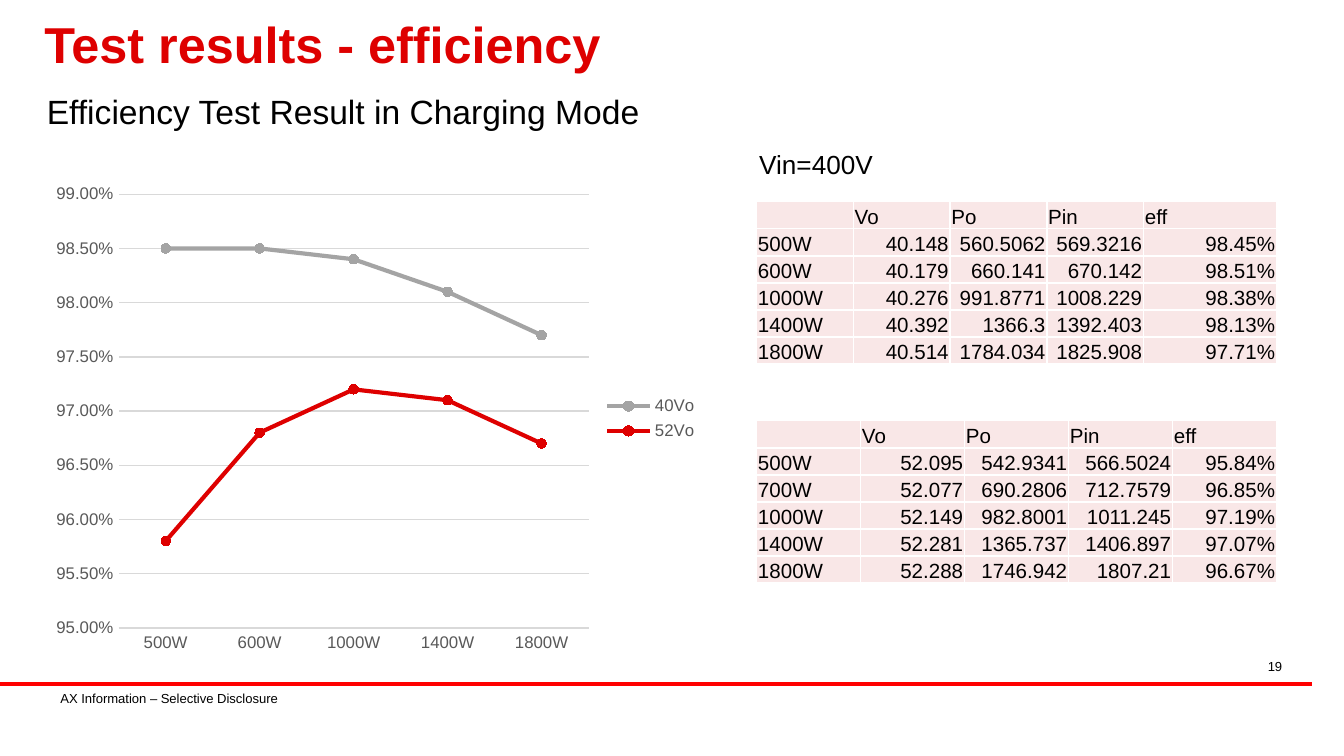
from dataclasses import dataclass

from lxml import etree
from pptx import Presentation
from pptx.chart.data import CategoryChartData
from pptx.dml.color import RGBColor
from pptx.enum.chart import XL_CHART_TYPE, XL_LEGEND_POSITION, XL_MARKER_STYLE, XL_TICK_MARK
from pptx.enum.shapes import MSO_CONNECTOR
from pptx.enum.text import MSO_ANCHOR, PP_ALIGN
from pptx.oxml.ns import qn
from pptx.util import Inches, Pt

LINE_MARKERS = XL_CHART_TYPE.LINE_MARKERS
LEGEND_RIGHT = XL_LEGEND_POSITION.RIGHT
CIRCLE = XL_MARKER_STYLE.CIRCLE
NO_TICK = XL_TICK_MARK.NONE
STRAIGHT = MSO_CONNECTOR.STRAIGHT
TOP, MIDDLE, BOTTOM = MSO_ANCHOR.TOP, MSO_ANCHOR.MIDDLE, MSO_ANCHOR.BOTTOM
LEFT, RIGHT = PP_ALIGN.LEFT, PP_ALIGN.RIGHT

COLUMNS, ROWS = 100, 56.25
CELL = Inches(0.1)


@dataclass(frozen=True)
class Theme:
    font: str = "Arial"
    ink: str = "000000"
    accent: str = "DE0000"
    rule: str = "FF0000"
    neutral: str = "A4A4A4"
    axis: str = "595959"
    grid: str = "D9D9D9"
    cell: str = "F9E7E7"
    border: str = "FFFFFF"
    title: float = 27
    subtitle: float = 18
    label: float = 14
    table: int = 11
    chart: float = 9
    footer: float = 7


def grid(*lengths):
    return [round(length * CELL) for length in lengths]


def rgb(value):
    return RGBColor.from_string(value)


class SlideBuilder:
    def __init__(self, slide, theme):
        self.shapes = slide.shapes
        self.theme = theme

    def style_font(self, font, size, color, bold=False):
        font.name, font.size, font.bold = self.theme.font, Pt(size), bold
        font.color.rgb = rgb(color)

    def style_line(self, line, color, width):
        line.color.rgb, line.width = rgb(color), Pt(width)

    def text(self, content, area, size, color=None, bold=False, align=LEFT,
             anchor=TOP, inset=(0.08, 0.04), spacing=1.0):
        frame = self.shapes.add_textbox(*grid(*area)).text_frame
        frame.word_wrap = True
        frame.vertical_anchor = anchor
        frame.margin_left = frame.margin_right = Inches(inset[0])
        frame.margin_top = frame.margin_bottom = Inches(inset[1])
        frame.text = content
        paragraph = frame.paragraphs[0]
        paragraph.alignment, paragraph.line_spacing = align, spacing
        self.style_font(paragraph.runs[0].font, size, color or self.theme.ink, bold)

    def rule(self, start, end, row):
        rule = self.shapes.add_connector(STRAIGHT, *grid(start, row, end, row))
        self.style_line(rule.line, self.theme.rule, 2.25)
        etree.SubElement(rule.element.spPr, qn("a:effectLst"))

    def line_chart(self, area, categories, series):
        data = CategoryChartData(number_format="0.00%")
        data.categories = categories
        for name, values, _ in series:
            data.add_series(name, values)
        chart = self.shapes.add_chart(LINE_MARKERS, *grid(*area), data).chart
        self.style_font(chart.font, self.theme.chart, self.theme.axis)
        chart.has_title = False
        chart.has_legend = True
        chart.legend.position = LEGEND_RIGHT
        chart.legend.include_in_layout = False
        self.style_font(chart.legend.font, self.theme.chart, self.theme.axis)

        for axis in (chart.category_axis, chart.value_axis):
            axis.major_tick_mark = axis.minor_tick_mark = NO_TICK
            self.style_font(axis.tick_labels.font, self.theme.chart, self.theme.axis)
        self.style_line(chart.category_axis.format.line, self.theme.grid, 0.75)
        scale = chart.value_axis
        scale.minimum_scale, scale.maximum_scale = 0.95, 0.99
        scale.major_unit = (scale.maximum_scale - scale.minimum_scale) / 8
        scale.tick_labels.number_format = "0.00%"
        scale.tick_labels.number_format_is_linked = False
        scale.format.line.fill.background()
        self.style_line(scale.major_gridlines.format.line, self.theme.grid, 0.75)

        plot = chart.plots[0]
        plot.vary_by_categories = False
        for curve, (_, _, color) in zip(plot.series, series):
            curve.smooth = False
            self.style_line(curve.format.line, color, 2.25)
            curve.marker.style, curve.marker.size = CIRCLE, 5
            curve.marker.format.fill.solid()
            curve.marker.format.fill.fore_color.rgb = rgb(color)
            self.style_line(curve.marker.format.line, color, 0.75)

    def border(self, cell):
        properties = cell._tc.get_or_add_tcPr()
        for side in ("lnL", "lnR", "lnT", "lnB"):
            edge = etree.SubElement(properties, qn(f"a:{side}"), w=str(Pt(1)))
            fill = etree.SubElement(edge, qn("a:solidFill"))
            etree.SubElement(fill, qn("a:srgbClr"), val=self.theme.border)

    def table_cell(self, cell, content, align):
        self.border(cell)
        cell.fill.solid()
        cell.fill.fore_color.rgb = rgb(self.theme.cell)
        cell.margin_left = cell.margin_right = cell.margin_top = Inches(0.01)
        cell.margin_bottom = 0
        cell.vertical_anchor = BOTTOM
        cell.text_frame.text = content
        paragraph = cell.text_frame.paragraphs[0]
        paragraph.alignment = align
        for run in paragraph.runs:
            self.style_font(run.font, self.theme.table, self.theme.ink)
        if not content:
            etree.SubElement(paragraph._p, qn("a:endParaRPr"), sz=str(self.theme.table * 100))

    def table(self, area, widths, records):
        table = self.shapes.add_table(len(records), len(widths), *grid(*area)).table
        table.first_row = table.horz_banding = False
        for column, width in zip(table.columns, grid(*widths)):
            column.width = width
        for row_index, record in enumerate(records):
            for column_index, content in enumerate(record):
                align = RIGHT if row_index and column_index else LEFT
                self.table_cell(table.cell(row_index, column_index), content, align)


HEADINGS = ("", "Vo", "Po", "Pin", "eff")
RESULTS_40V = (
    HEADINGS,
    ("500W", "40.148", "560.5062", "569.3216", "98.45%"),
    ("600W", "40.179", "660.141", "670.142", "98.51%"),
    ("1000W", "40.276", "991.8771", "1008.229", "98.38%"),
    ("1400W", "40.392", "1366.3", "1392.403", "98.13%"),
    ("1800W", "40.514", "1784.034", "1825.908", "97.71%"),
)
RESULTS_52V = (
    HEADINGS,
    ("500W", "52.095", "542.9341", "566.5024", "95.84%"),
    ("700W", "52.077", "690.2806", "712.7579", "96.85%"),
    ("1000W", "52.149", "982.8001", "1011.245", "97.19%"),
    ("1400W", "52.281", "1365.737", "1406.897", "97.07%"),
    ("1800W", "52.288", "1746.942", "1807.21", "96.67%"),
)
EFFICIENCY_40V = (0.985, 0.985, 0.984, 0.981, 0.977)
EFFICIENCY_52V = (0.958, 0.968, 0.972, 0.971, 0.967)


def main():
    presentation = Presentation()
    presentation.slide_width, presentation.slide_height = grid(COLUMNS, ROWS)
    theme = Theme()
    page = SlideBuilder(presentation.slides.add_slide(presentation.slide_layouts[6]), theme)

    page.rule(0, 97.6, 50.9)
    page.text("AX Information – Selective Disclosure", (3.7, 50.95, 23.1, 2), theme.footer)
    page.text("19", (72.9, 48.6, 23.3, 1.7), theme.footer, align=RIGHT)
    page.text("Efficiency Test Result in Charging Mode", (2.5, 6.3, 49.2, 4),
              theme.subtitle, inset=(0.1, 0.05))
    page.text("Test results - efficiency", (2.5, 0.2, 92.5, 6.7), theme.title,
              color=theme.accent, bold=True, anchor=MIDDLE, spacing=0.85)
    power_levels = [record[0] for record in RESULTS_40V[1:]]
    page.line_chart((3.2, 13, 49.7, 36.3), power_levels, (
        ("40Vo", EFFICIENCY_40V, theme.neutral),
        ("52Vo", EFFICIENCY_52V, theme.accent),
    ))
    page.table((56.3, 31.3, 38.7, 12.1), [38.7 / 5] * 5, RESULTS_52V)
    page.table((56.3, 15, 38.7, 12.1), [7.2] * 4 + [9.9], RESULTS_40V)
    page.text("Vin=400V", (55.5, 10.55, 25.1, 3.4), theme.label, inset=(0.1, 0.05))
    presentation.save("out.pptx")


if __name__ == "__main__":
    main()
